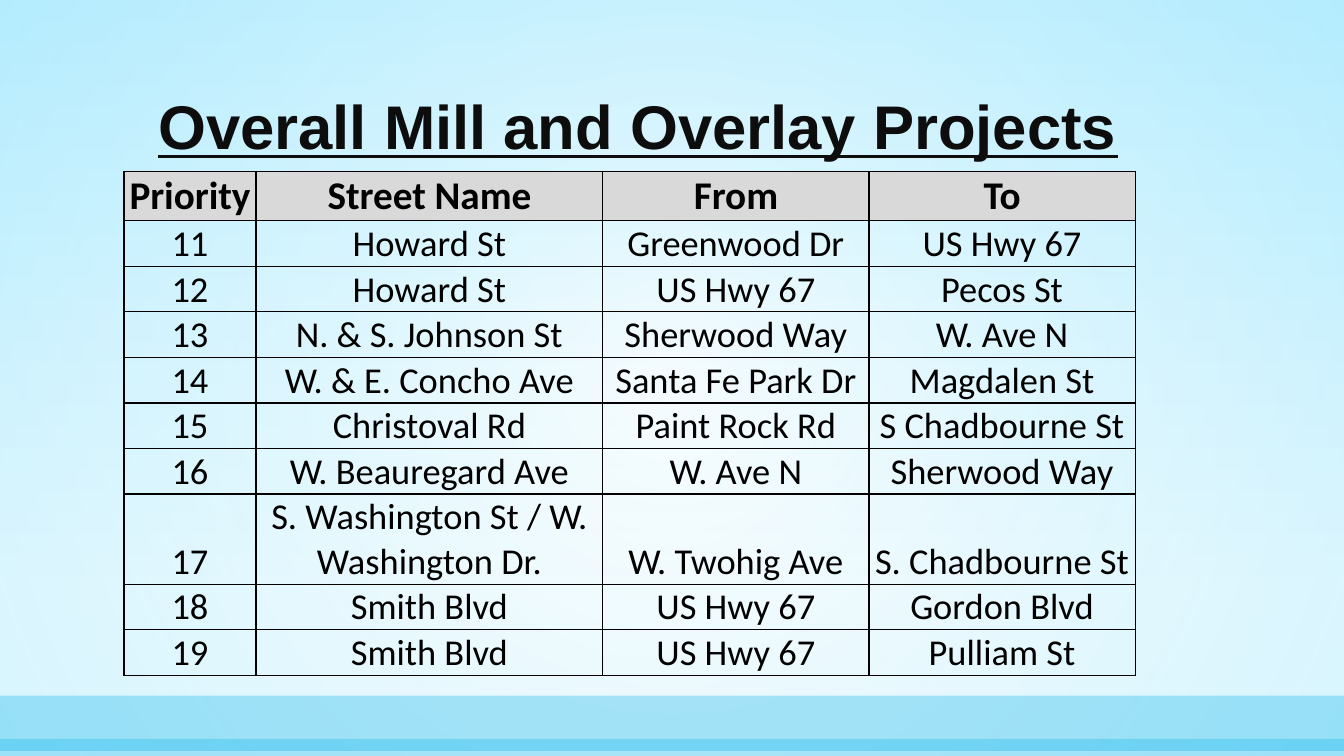
import pptx
import pptx.dml.color
import pptx.enum.shapes
import pptx.enum.text
import pptx.oxml
import pptx.oxml.ns
import pptx.util
from pptx.util import Inches

COLORS = {
    "sky": "C8F1FF",
    "white": "FFFFFF",
    "glow_edge": "91E4FF",
    "band": "00B0EA",
    "title": "0D0D0D",
    "text": "000000",
    "border": "000000",
    "header": "D9D9D9",
}
NAMESPACE = pptx.oxml.ns.nsdecls("a")
ANCHOR = pptx.enum.text.MSO_ANCHOR
ALIGN = pptx.enum.text.PP_ALIGN


def rgb(name):
    return pptx.dml.color.RGBColor.from_string(COLORS[name])


def write_text(frame, text, *, font, size, color, bold=False, underline=False, align=ALIGN.LEFT):
    frame.text = text
    paragraph = frame.paragraphs[0]
    paragraph.alignment = align
    run_font = paragraph.runs[0].font
    run_font.name = font
    run_font.size = pptx.util.Pt(size)
    run_font.bold = bold
    run_font.underline = underline
    run_font.color.rgb = rgb(color)


presentation = pptx.Presentation()
presentation.slide_width = Inches(13.33)
presentation.slide_height = Inches(7.5)
slide = presentation.slides.add_slide(presentation.slide_layouts[5])

# Background: pale blue fading to white, downwards
background = slide.background.fill
background.gradient()
background.gradient_angle = 270
for stop, color, position in zip(background.gradient_stops, ("sky", "white"), (0, 0.79)):
    stop.color.rgb = rgb(color)
    stop.position = position

# Translucent glow over the whole slide and two bands at the foot
backdrop = [
    (0, 7.5, [("white", 49), ("glow_edge", 35)]),
    (6.9, 0.55, [("band", 30)]),
    (7.33, 0.17, [("band", 28)]),
]
for top, height, tints in backdrop:
    shape = slide.shapes.add_shape(
        pptx.enum.shapes.MSO_SHAPE.RECTANGLE, 0, Inches(top), presentation.slide_width, Inches(height))
    shape.shadow.inherit = False
    shape.line.fill.background()
    if len(tints) > 1:
        shape.fill.gradient()
        for position, (stop, (color, _)) in enumerate(zip(shape.fill.gradient_stops, tints)):
            stop.color.rgb = rgb(color)
            stop.position = position
        linear = shape._element.spPr.find(".//" + pptx.oxml.ns.qn("a:lin"))
        linear.getparent().replace(linear, pptx.oxml.parse_xml(
            f'<a:path {NAMESPACE} path="circle">'
            '<a:fillToRect l="50000" t="50000" r="50000" b="50000"/></a:path>'))
    else:
        shape.fill.solid()
        shape.fill.fore_color.rgb = rgb(tints[0][0])
    color_elements = shape._element.spPr.findall(".//" + pptx.oxml.ns.qn("a:srgbClr"))
    for element, (_, opacity) in zip(color_elements, tints):
        element.append(pptx.oxml.parse_xml(f'<a:alpha {NAMESPACE} val="{opacity * 1000}"/>'))

# Title, brought in front of the backdrop
title = slide.shapes.title
title._element.getparent().append(title._element)
title.left, title.top, title.width, title.height = map(Inches, (1.47, 0.48, 10.4, 1.19))
title.text_frame.word_wrap = True
title.text_frame.auto_size = pptx.enum.text.MSO_AUTO_SIZE.NONE
title.text_frame.vertical_anchor = ANCHOR.BOTTOM
write_text(title.text_frame, "Overall Mill and Overlay Projects",
           font="Arial", size=44, color="title", bold=True, underline=True)
title.text_frame.paragraphs[0].line_spacing = 0.9

# Project table
projects = [
    ("Priority", "Street Name", "From", "To"),
    ("11", "Howard St", "Greenwood Dr", "US Hwy 67"),
    ("12", "Howard St", "US Hwy 67", "Pecos St"),
    ("13", "N. & S. Johnson St", "Sherwood Way", "W. Ave N"),
    ("14", "W. & E. Concho Ave", "Santa Fe Park Dr", "Magdalen St"),
    ("15", "Christoval Rd", "Paint Rock Rd", "S Chadbourne St"),
    ("16", "W. Beauregard Ave", "W. Ave N", "Sherwood Way"),
    ("17", "S. Washington St / W. Washington Dr.", "W. Twohig Ave", "S. Chadbourne St"),
    ("18", "Smith Blvd", "US Hwy 67", "Gordon Blvd"),
    ("19", "Smith Blvd", "US Hwy 67", "Pulliam St"),
]
column_widths = [1.31, 3.44, 2.64, 2.64]
row_height = 0.45
table = slide.shapes.add_table(
    len(projects), len(column_widths), Inches(1.23), Inches(1.7),
    Inches(sum(column_widths)), Inches(row_height * len(projects))).table
table.first_row = False
table.horz_banding = False
for column, width in zip(table.columns, column_widths):
    column.width = Inches(width)

for row_index, project in enumerate(projects):
    is_header = row_index == 0
    table.rows[row_index].height = Inches(0.49 if is_header else row_height)
    for column_index, text in enumerate(project):
        cell = table.cell(row_index, column_index)
        cell.margin_left = cell.margin_right = cell.margin_top = Inches(0.01)
        cell.margin_bottom = 0
        cell.vertical_anchor = ANCHOR.MIDDLE if is_header else ANCHOR.BOTTOM
        write_text(cell.text_frame, text, font="Calibri", size=28 if is_header else 26,
                   color="text", bold=is_header, align=ALIGN.CENTER)
        if is_header:
            cell.fill.solid()
            cell.fill.fore_color.rgb = rgb("header")
        else:
            cell.fill.background()
        properties = cell._tc.get_or_add_tcPr()
        for position, side in enumerate("LRTB"):
            properties.insert(position, pptx.oxml.parse_xml(
                f'<a:ln{side} {NAMESPACE} w="12700"><a:solidFill>'
                f'<a:srgbClr val="{COLORS["border"]}"/></a:solidFill></a:ln{side}>'))

presentation.save("out.pptx")
